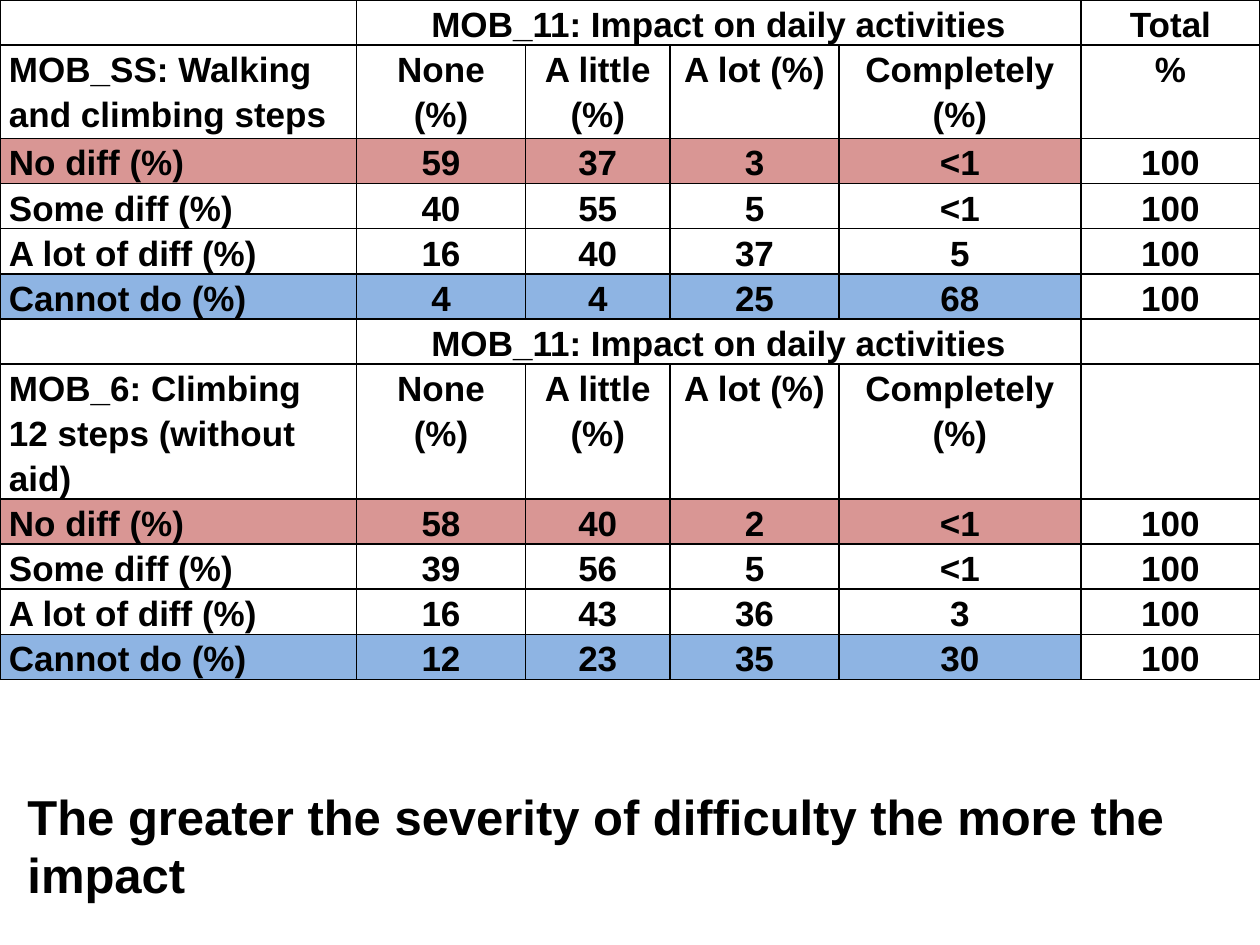
import pptx
import pptx.util
import pptx.dml.color
import pptx.enum.text
import pptx.oxml
import pptx.oxml.ns
from pptx.util import Cm

COLORS = {"text": "000000", "border": "000000", "none": "D99694", "cannot": "8EB4E3"}
FONT = "Arial"
COL_WIDTHS = [7.19, 3.4, 2.92, 3.4, 4.88, 3.61]
LINE_HEIGHT, HEADER_HEIGHT = 0.91, 1.88
IMPACT = "MOB_11: Impact on daily activities"
LEVELS = ["None (%)", "A little (%)", "A lot (%)", "Completely (%)"]
SEVERITIES = ["No diff (%)", "Some diff (%)", "A lot of diff (%)", "Cannot do (%)"]
ROW_FILLS = ["none", None, None, "cannot"]
BLOCKS = [
    ("MOB_SS: Walking and climbing steps", "Total", "%",
     [["59", "37", "3", "<1"], ["40", "55", "5", "<1"],
      ["16", "40", "37", "5"], ["4", "4", "25", "68"]]),
    ("MOB_6: Climbing 12 steps (without aid)", "", "",
     [["58", "40", "2", "<1"], ["39", "56", "5", "<1"],
      ["16", "43", "36", "3"], ["12", "23", "35", "30"]]),
]
TAKEAWAY = "The greater the severity of difficulty the more the impact"


def rgb(name):
    return pptx.dml.color.RGBColor.from_string(COLORS[name])


def format_runs(p, size):
    for r in p.runs:
        r.font.name = FONT
        r.font.size = pptx.util.Pt(size)
        r.font.bold = True
        r.font.color.rgb = rgb("text")


def set_borders(cell):
    tcPr = cell._tc.get_or_add_tcPr()
    for side in ("lnL", "lnR", "lnT", "lnB"):
        tcPr.append(pptx.oxml.parse_xml(
            f'<a:{side} {pptx.oxml.ns.nsdecls("a")} w="12700"><a:solidFill>'
            f'<a:srgbClr val="{COLORS["border"]}"/></a:solidFill></a:{side}>'))


def fill_cell(cell, text, centered, fill):
    cell.margin_left = cell.margin_right = Cm(0.18)
    cell.margin_top = cell.margin_bottom = 0
    set_borders(cell)
    if fill:
        cell.fill.solid()
        cell.fill.fore_color.rgb = rgb(fill)
    else:
        cell.fill.background()
    p = cell.text_frame.paragraphs[0]
    p.text = text
    p.line_spacing = 1.15
    if centered:
        p.alignment = pptx.enum.text.PP_ALIGN.CENTER
    format_runs(p, 20)


def block_rows(question, total, unit, values):
    rows = [(["", IMPACT, "", "", "", total], None, LINE_HEIGHT),
            ([question, *LEVELS, unit], None, HEADER_HEIGHT)]
    for severity, shares, fill in zip(SEVERITIES, values, ROW_FILLS):
        rows.append(([severity, *shares, "100"], fill, LINE_HEIGHT))
    return rows


def add_impact_table(s):
    rows = [row for block in BLOCKS for row in block_rows(*block)]
    height = sum(row[2] for row in rows)
    table = s.shapes.add_table(len(rows), len(COL_WIDTHS), 0, 0,
                               Cm(sum(COL_WIDTHS)), Cm(height)).table
    table.first_row = table.horz_banding = False
    for column, width in zip(table.columns, COL_WIDTHS):
        column.width = Cm(width)
    last = len(COL_WIDTHS) - 1
    for i, (texts, fill, row_height) in enumerate(rows):
        table.rows[i].height = Cm(row_height)
        for j, text in enumerate(texts):
            fill_cell(table.cell(i, j), text, j > 0, fill if j < last else None)
        if texts[1] == IMPACT:
            table.cell(i, 1).merge(table.cell(i, last - 1))


def add_takeaway(s):
    body = s.placeholders[1]
    body.left, body.top, body.width, body.height = Cm(0.3), Cm(15.72), Cm(24.61), Cm(3.33)
    body.text_frame.text = TAKEAWAY
    p = body.text_frame.paragraphs[0]
    pPr = p._p.get_or_add_pPr()
    pPr.set("marL", "0")
    pPr.set("indent", "0")
    pPr.append(pptx.oxml.parse_xml(f'<a:buNone {pptx.oxml.ns.nsdecls("a")}/>'))
    format_runs(p, 28)


def main():
    prs = pptx.Presentation()
    prs.slide_width, prs.slide_height = Cm(25.4), Cm(19.05)
    s = prs.slides.add_slide(prs.slide_layouts[1])
    title = s.shapes.title._element
    title.getparent().remove(title)
    add_impact_table(s)
    add_takeaway(s)
    prs.save("out.pptx")


if __name__ == "__main__":
    main()
